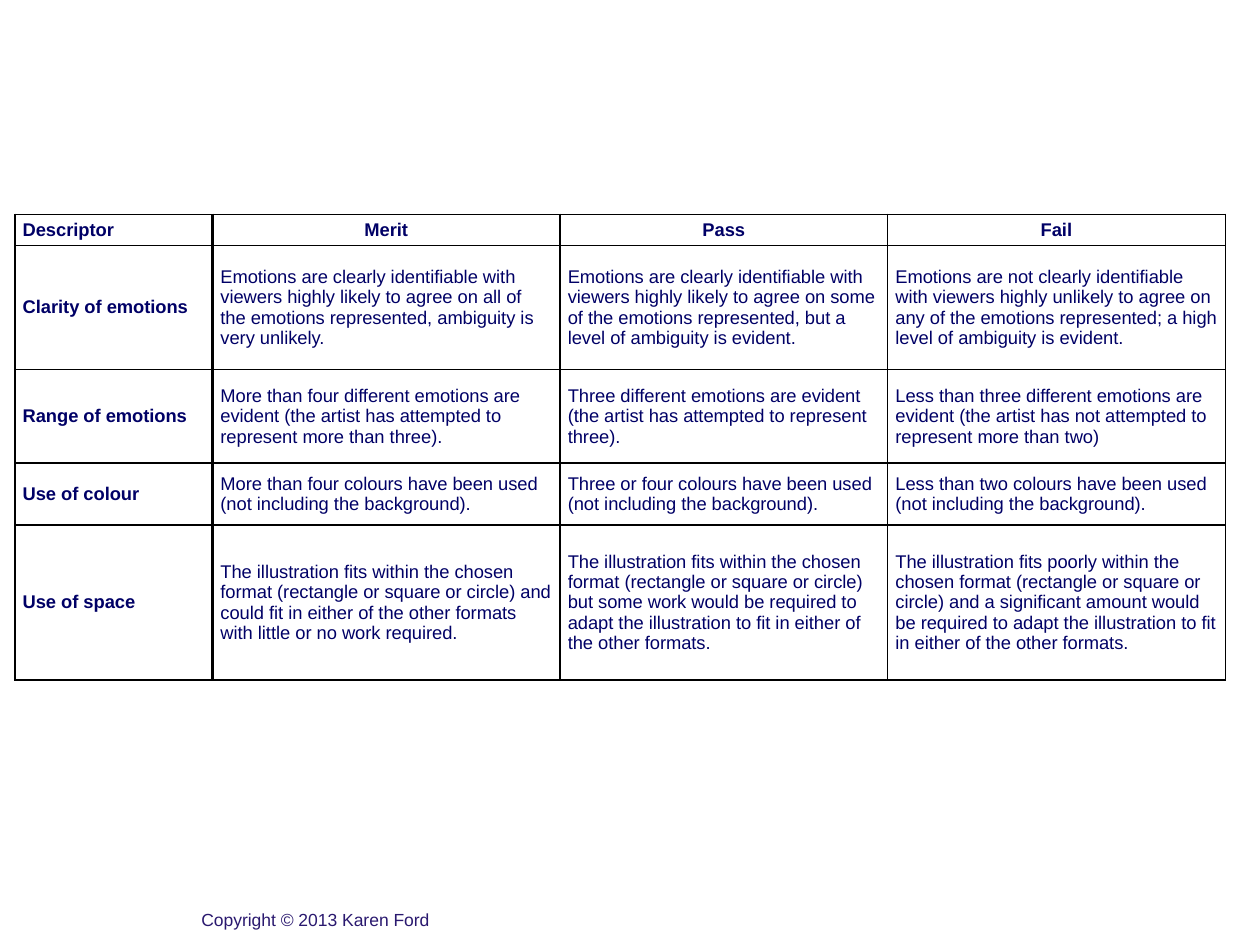
from lxml.etree import SubElement
from pptx import Presentation
from pptx.dml.color import RGBColor
from pptx.enum.text import MSO_ANCHOR as Anchor, PP_ALIGN as Align
from pptx.oxml.ns import qn
from pptx.util import Pt

NAVY = RGBColor(0x00, 0x00, 0x66)
INDIGO = RGBColor(0x2A, 0x19, 0x6F)
BLACK = RGBColor(0x00, 0x00, 0x00)

COLUMN_WIDTHS = [113, 198.5, 187.25, 193]
ROW_HEIGHTS = [17.75, 71, 53.25, 35.5, 88.75]
RUBRIC = [
    ["Descriptor", "Merit", "Pass", "Fail"],
    ["Clarity of emotions",
     "Emotions are clearly identifiable with viewers highly likely to agree on all of the "
     "emotions represented, ambiguity is very unlikely.",
     "Emotions are clearly identifiable with viewers highly likely to agree on some of the "
     "emotions represented, but a level of ambiguity is evident.",
     "Emotions are not clearly identifiable with viewers highly unlikely to agree on any of "
     "the emotions represented; a high level of ambiguity is evident."],
    ["Range of emotions",
     "More than four different emotions are evident (the artist has attempted to represent "
     "more than three).",
     "Three different emotions are evident (the artist has attempted to represent three).",
     "Less than three different emotions are evident (the artist has not attempted to "
     "represent more than two)"],
    ["Use of colour",
     "More than four colours have been used (not including the background).",
     "Three or four colours have been used (not including the background).",
     "Less than two colours have been used (not including the background)."],
    ["Use of space",
     "The illustration fits within the chosen format (rectangle or square or circle) and "
     "could fit in either of the other formats with little or no work required.",
     "The illustration fits within the chosen format (rectangle or square or circle) but some "
     "work would be required to adapt the illustration to fit in either of the other formats.",
     "The illustration fits poorly within the chosen format (rectangle or square or circle) "
     "and a significant amount would be required to adapt the illustration to fit in either "
     "of the other formats."],
]


class SlideBuilder:
    font_name = "Arial"

    def __init__(self, slide):
        self.slide = slide

    def style(self, paragraph, size, color, bold=False, align=Align.LEFT):
        paragraph.alignment = align
        for run in paragraph.runs:
            run.font.name = self.font_name
            run.font.size = Pt(size)
            run.font.bold = bold
            run.font.color.rgb = color

    def border(self, cell, widths):
        """Draw the cell's edges; widths maps lnL, lnR, lnT and lnB, in that order, to points."""
        properties = cell._tc.get_or_add_tcPr()
        for position, (edge, width) in enumerate(widths.items()):
            line = SubElement(properties, qn(f"a:{edge}"), w=str(Pt(width)))
            properties.insert(position, line)
            fill = SubElement(line, qn("a:solidFill"))
            SubElement(fill, qn("a:srgbClr"), val=str(BLACK))

    def rubric(self, left, top, rows, widths, heights):
        table = self.slide.shapes.add_table(
            len(rows), len(widths), Pt(left), Pt(top),
            Pt(sum(widths)), Pt(sum(heights))).table
        table.first_row = table.horz_banding = False
        for column, width in zip(table.columns, widths):
            column.width = Pt(width)
        for row, height in zip(table.rows, heights):
            row.height = Pt(height)
        for r, texts in enumerate(rows):
            for c, text in enumerate(texts):
                cell = table.cell(r, c)
                cell.text = text
                cell.vertical_anchor = Anchor.MIDDLE
                cell.margin_left = cell.margin_right = Pt(4.5)
                cell.margin_top = cell.margin_bottom = 0
                cell.fill.background()
                self.border(cell, {"lnL": 1.5 if c == 1 else 1,
                                   "lnR": 1.5 if c == 0 else 1,
                                   "lnT": 1, "lnB": 1})
                self.style(cell.text_frame.paragraphs[0], 10.5, NAVY,
                           bold=r == 0 or c == 0,
                           align=Align.CENTER if r == 0 and c > 0 else Align.LEFT)

    def text(self, left, top, width, height, wording, size, color):
        frame = self.slide.shapes.add_textbox(
            Pt(left), Pt(top), Pt(width), Pt(height)).text_frame
        frame.word_wrap = True
        frame.text = wording
        self.style(frame.paragraphs[0], size, color)


def main():
    deck = Presentation()
    deck.slide_width, deck.slide_height = Pt(720), Pt(540)
    builder = SlideBuilder(deck.slides.add_slide(deck.slide_layouts[6]))
    builder.rubric(8.5, 122.5, RUBRIC, COLUMN_WIDTHS, ROW_HEIGHTS)
    builder.text(108, 516, 490, 24, "Copyright © 2013 Karen Ford", 10, INDIGO)
    deck.save("out.pptx")


if __name__ == "__main__":
    main()
